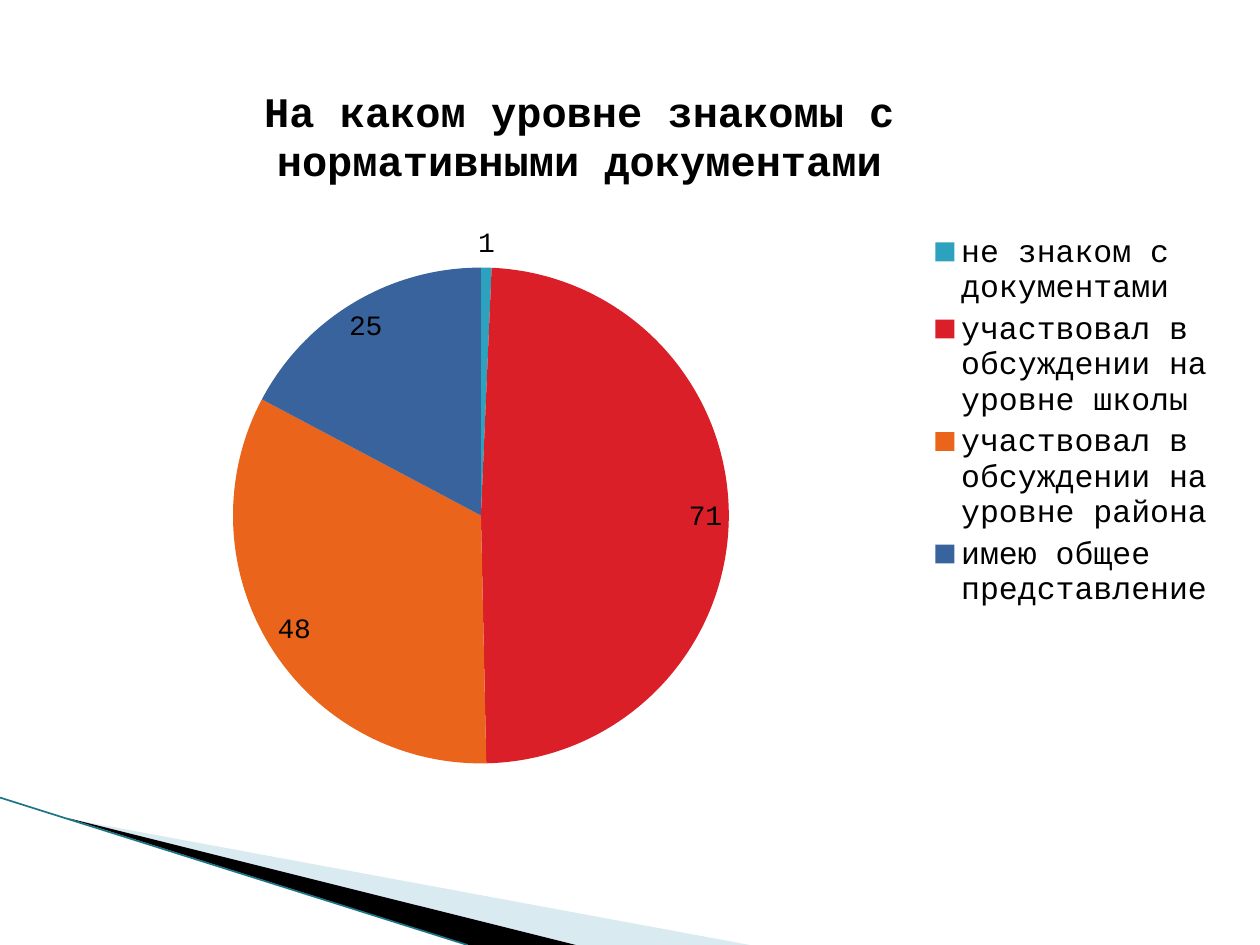
from typing import NamedTuple

from lxml.etree import SubElement
from pptx import Presentation
from pptx.chart.chart import Chart
from pptx.chart.data import CategoryChartData
from pptx.dml.color import RGBColor
from pptx.enum.chart import XL_CHART_TYPE, XL_LABEL_POSITION, XL_LEGEND_POSITION
from pptx.enum.shapes import MSO_CONNECTOR
from pptx.oxml import parse_xml
from pptx.oxml.ns import nsdecls, qn
from pptx.slide import Slide
from pptx.util import Inches, Pt


class Wedge(NamedTuple):
    corners: list[tuple[float, float]]
    fill: str
    opacity: int


class Answer(NamedTuple):
    wording: str
    votes: int
    fill: str


class Frame(NamedTuple):
    x: float
    y: float
    w: float | None = None
    h: float | None = None


FONT = "Courier New"
QUESTION = "На каком уровне знакомы с нормативными документами"
WEDGES = [
    Wedge([(0.55, 6.5), (5.95, 7.5), (4.56, 7.5)], "A0CBDC", 40),
    Wedge([(0.53, 6.49), (4.57, 7.5), (3.72, 7.5)], "000000", 100),
]
ANSWERS = [
    Answer("не знаком с документами", 1, "2DA2BF"),
    Answer("участвовал в обсуждении на уровне школы", 71, "DA1F28"),
    Answer("участвовал в обсуждении на уровне района", 48, "EB641B"),
    Answer("имею общее представление", 25, "39639D"),
]
TITLE_FRAME = Frame(0.18, 0.02)
PIE_FRAME = Frame(0.16, 0.28, 0.42, 0.7)
LEGEND_FRAME = Frame(0.75, 0.23, 0.24, 0.54)


def color(code: str) -> RGBColor:
    """Turn a hex string into a colour."""
    return RGBColor.from_string(code)


def set_font(font, size: int, bold: bool = False) -> None:
    """Apply the chart typeface at a given size."""
    for attribute, value in {"name": FONT, "size": Pt(size), "bold": bold}.items():
        setattr(font, attribute, value)
    font.color.rgb = color("000000")


def draw_wedge(slide: Slide, wedge: Wedge) -> None:
    """Draw one decorative triangle."""
    first, *others = [(Inches(x), Inches(y)) for x, y in wedge.corners]
    builder = slide.shapes.build_freeform(*first)
    builder.add_line_segments(others)
    triangle = builder.convert_to_shape()
    triangle.shadow.inherit = False
    triangle.line.fill.background()
    triangle.fill.solid()
    triangle.fill.fore_color.rgb = color(wedge.fill)
    if wedge.opacity < 100:
        tint = triangle.fill._xPr.find(f".//{qn('a:srgbClr')}")
        SubElement(tint, qn("a:alpha"), val=str(wedge.opacity * 1000))


def draw_edge(slide: Slide) -> None:
    """Draw the thin line along the lower wedge."""
    edge = slide.shapes.add_connector(
        MSO_CONNECTOR.STRAIGHT, Inches(0), Inches(6.33), Inches(3.71), Inches(7.5)
    )
    edge.line.color.rgb = color("1B7587")
    edge.line.width = Pt(0.95)
    SubElement(edge._element.spPr, qn("a:effectLst"))


def make_layout(frame: Frame, inner: bool = False):
    """Build a manual chart layout from fractions of the chart size."""
    target = '<c:layoutTarget val="inner"/>' if inner else ""
    sides = {side: size for side, size in frame._asdict().items() if size is not None}
    modes = "".join(f'<c:{side}Mode val="edge"/>' for side in "xy")
    values = "".join(f'<c:{side} val="{size}"/>' for side, size in sides.items())
    return parse_xml(
        f"<c:layout {nsdecls('c')}><c:manualLayout>{target}{modes}{values}"
        "</c:manualLayout></c:layout>"
    )


def place(part, after: str | None, frame: Frame, inner: bool = False) -> None:
    """Give a chart part its manual layout."""
    for old in part.findall(qn("c:layout")):
        part.remove(old)
    layout = make_layout(frame, inner)
    if after:
        part.find(qn(after)).addnext(layout)
    else:
        part.insert(0, layout)


def style_pie(chart: Chart) -> None:
    """Colour the slices and set their value labels."""
    pie = chart.plots[0]
    pie.vary_by_categories = True
    for index, answer in enumerate(ANSWERS):
        slice_fill = pie.series[0].points[index].format.fill
        slice_fill.solid()
        slice_fill.fore_color.rgb = color(answer.fill)
    pie.has_data_labels = True
    labels = pie.data_labels
    labels.show_value = True
    labels.show_percentage = False
    labels.position = XL_LABEL_POSITION.BEST_FIT
    set_font(labels.font, 16)


def draw_survey(slide: Slide) -> None:
    """Draw the pie chart of survey answers."""
    survey = CategoryChartData()
    survey.categories = [answer.wording for answer in ANSWERS]
    survey.add_series(QUESTION, [answer.votes for answer in ANSWERS])
    chart = slide.shapes.add_chart(
        XL_CHART_TYPE.PIE, Inches(0.35), Inches(0.52), Inches(9.37), Inches(5.67), survey
    ).chart
    set_font(chart.font, 10)
    chart.has_title = True
    heading = chart.chart_title.text_frame
    heading.text = QUESTION
    set_font(heading.paragraphs[0].runs[0].font, 24, bold=True)
    chart.has_legend = True
    chart.legend.position = XL_LEGEND_POSITION.RIGHT
    chart.legend.include_in_layout = False
    set_font(chart.legend.font, 18)
    style_pie(chart)
    place(chart.chart_title._element, "c:tx", TITLE_FRAME)
    place(chart.legend._element, "c:legendPos", LEGEND_FRAME)
    place(chart._chartSpace.chart.plotArea, None, PIE_FRAME, inner=True)


def main() -> None:
    """Build the slide and save it."""
    presentation = Presentation()
    presentation.slide_width = Inches(10)
    presentation.slide_height = Inches(7.5)
    slide = presentation.slides.add_slide(presentation.slide_layouts[6])
    for wedge in WEDGES:
        draw_wedge(slide, wedge)
    draw_edge(slide)
    draw_survey(slide)
    presentation.save("out.pptx")


if __name__ == "__main__":
    main()
